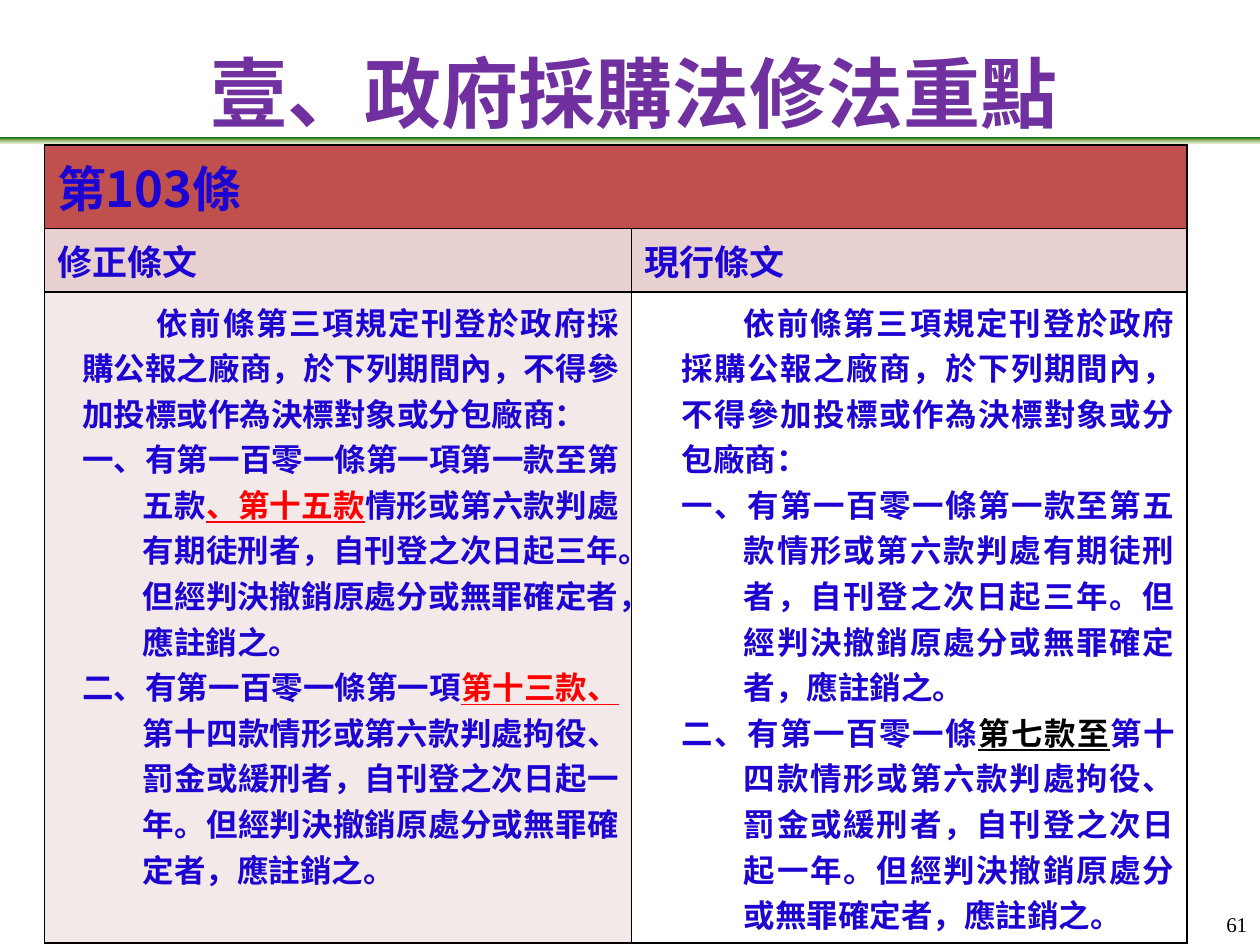
import copy
import pptx
import pptx.dml.color
import pptx.enum.shapes
import pptx.enum.text
import pptx.oxml
import pptx.oxml.ns
import pptx.util

Pt = pptx.util.Pt
ALIGN = pptx.enum.text.PP_ALIGN
ANCHOR = pptx.enum.text.MSO_ANCHOR
CJK = "Noto Sans CJK SC"
BLUE, RED, BLACK = "1D04D2", "FF0000", "000000"

OPENING = "依前條第三項規定刊登於政府採購公報之廠商，於下列期間內，不得參加投標或作為決標對象或分包廠商："
THREE_YEARS = "情形或第六款判處有期徒刑者，自刊登之次日起三年。但經判決撤銷原處分或無罪確定者，應註銷之。"
ONE_YEAR = "第十四款情形或第六款判處拘役、罰金或緩刑者，自刊登之次日起一年。但經判決撤銷原處分或無罪確定者，應註銷之。"

# Each paragraph is a list of (text, colour); any colour but blue marks a change.
AMENDED = [
    [(OPENING, BLUE)],
    [("一、有第一百零一條第一項第一款至第五款", BLUE), ("、第十五款", RED), (THREE_YEARS, BLUE)],
    [("二、有第一百零一條第一項", BLUE), ("第十三款、", RED), (ONE_YEAR, BLUE)],
]
CURRENT = [
    [(OPENING, BLUE)],
    [("一、有第一百零一條第一款至第五款" + THREE_YEARS, BLUE)],
    [("二、有第一百零一條", BLUE), ("第七款至", BLACK), (ONE_YEAR, BLUE)],
]


def rgb(value):
    return pptx.dml.color.RGBColor.from_string(value)


class SlideWriter:
    def __init__(self, deck):
        self.page = deck.slides.add_slide(deck.slide_layouts[5])

    def style(self, span, size, color=BLUE, font=CJK, bold=True):
        span.font.size = Pt(size)
        span.font.bold = bold
        span.font.color.rgb = rgb(color)
        span.font.name = font
        east_asian = pptx.oxml.parse_xml(
            f'<a:ea {pptx.oxml.ns.nsdecls("a")} typeface="{font}"/>')
        span.font._element.find(pptx.oxml.ns.qn("a:latin")).addnext(east_asian)

    def gradient_bar(self, left, top, width, height, colors):
        bar = self.page.shapes.add_shape(
            pptx.enum.shapes.MSO_SHAPE.RECTANGLE, Pt(left), Pt(top), Pt(width), Pt(height))
        bar.shadow.inherit = False
        bar.line.fill.background()
        bar.fill.gradient()
        bar.fill.gradient_angle = 270
        first = bar.fill._xPr.find(".//" + pptx.oxml.ns.qn("a:gs"))
        first.addnext(copy.deepcopy(first))
        for index, (stop, color) in enumerate(zip(bar.fill.gradient_stops, colors)):
            stop.position = index / (len(colors) - 1)
            stop.color.rgb = rgb(color)

    def title(self, left, top, width, height, text):
        box = self.page.shapes.title
        box.left, box.top, box.width, box.height = Pt(left), Pt(top), Pt(width), Pt(height)
        frame = box.text_frame
        frame.text = text
        frame.auto_size = pptx.enum.text.MSO_AUTO_SIZE.NONE
        frame.vertical_anchor = ANCHOR.MIDDLE
        frame.paragraphs[0].alignment = ALIGN.CENTER
        self.style(frame.paragraphs[0].runs[0], 44, "7030A0")

    def page_number(self, left, top, width, height, text):
        frame = self.page.shapes.add_textbox(
            Pt(left), Pt(top), Pt(width), Pt(height)).text_frame
        frame.margin_left = frame.margin_right = Pt(1.5)
        frame.margin_top = frame.margin_bottom = 0
        frame.word_wrap = True
        frame.vertical_anchor = ANCHOR.BOTTOM
        frame.text = text
        frame.paragraphs[0].alignment = ALIGN.RIGHT
        self.style(frame.paragraphs[0].runs[0], 12, BLACK, "Times New Roman", False)

    def table(self, left, top, widths, heights):
        table = self.page.shapes.add_table(
            len(heights), len(widths), Pt(left), Pt(top),
            Pt(sum(widths)), Pt(sum(heights))).table
        for column, width in zip(table.columns, widths):
            column.width = Pt(width)
        for row, height in zip(table.rows, heights):
            row.height = Pt(height)
        for cell in table.iter_cells():
            self.borders(cell)
        return table

    def borders(self, cell):
        properties = cell._tc.get_or_add_tcPr()
        for side in ("lnL", "lnR", "lnT", "lnB"):
            properties.append(pptx.oxml.parse_xml(
                f'<a:{side} {pptx.oxml.ns.nsdecls("a")} w="{Pt(1)}"><a:solidFill>'
                f'<a:srgbClr val="{BLACK}"/></a:solidFill></a:{side}>'))

    def shade(self, cell, fill):
        if fill:
            cell.fill.solid()
            cell.fill.fore_color.rgb = rgb(fill)
        else:
            cell.fill.background()

    def heading_cell(self, cell, text, size, fill):
        self.shade(cell, fill)
        cell.text_frame.text = text
        self.style(cell.text_frame.paragraphs[0].runs[0], size)

    def article_cell(self, cell, article, indents, fill=None):
        """Write an article; indents holds (left margin, first line offset) per paragraph."""
        self.shade(cell, fill)
        frame = cell.text_frame
        for index, (parts, (margin, offset)) in enumerate(zip(article, indents)):
            para = frame.add_paragraph() if index else frame.paragraphs[0]
            para.alignment = ALIGN.JUSTIFY
            properties = para._p.get_or_add_pPr()
            properties.set("marL", str(Pt(margin)))
            properties.set("indent", str(Pt(offset)))
            for text, color in parts:
                span = para.add_run()
                span.text = text
                self.style(span, 18, color)
                if color != BLUE:
                    span.font.underline = True


def main():
    deck = pptx.Presentation()
    deck.slide_width, deck.slide_height = Pt(720), Pt(540)
    writer = SlideWriter(deck)
    writer.gradient_bar(0, 78.5, 720, 3.6, ["156B13", "9CB86E", "DDEBCF"])
    writer.title(36, 21.6, 653, 61.2, "壹、政府採購法修法重點")

    table = writer.table(25.4, 82.8, [335.5, 317.5], [47.5, 36.5, 372])
    table.cell(0, 0).merge(table.cell(0, 1))
    writer.heading_cell(table.cell(0, 0), "第103條", 28, "C0504D")
    for column, heading in enumerate(["修正條文", "現行條文"]):
        writer.heading_cell(table.cell(1, column), heading, 20, "E8D0D0")
    writer.article_cell(table.cell(2, 0), AMENDED,
                        [(14.4, 42.6), (49, -34.6), (49, -34.6)], "F4E9E9")
    writer.article_cell(table.cell(2, 1), CURRENT,
                        [(21.6, 35.4), (57, -35.4), (57, -35.4)])

    writer.page_number(674.6, 507, 39.6, 28, "61")
    deck.save("out.pptx")


if __name__ == "__main__":
    main()
